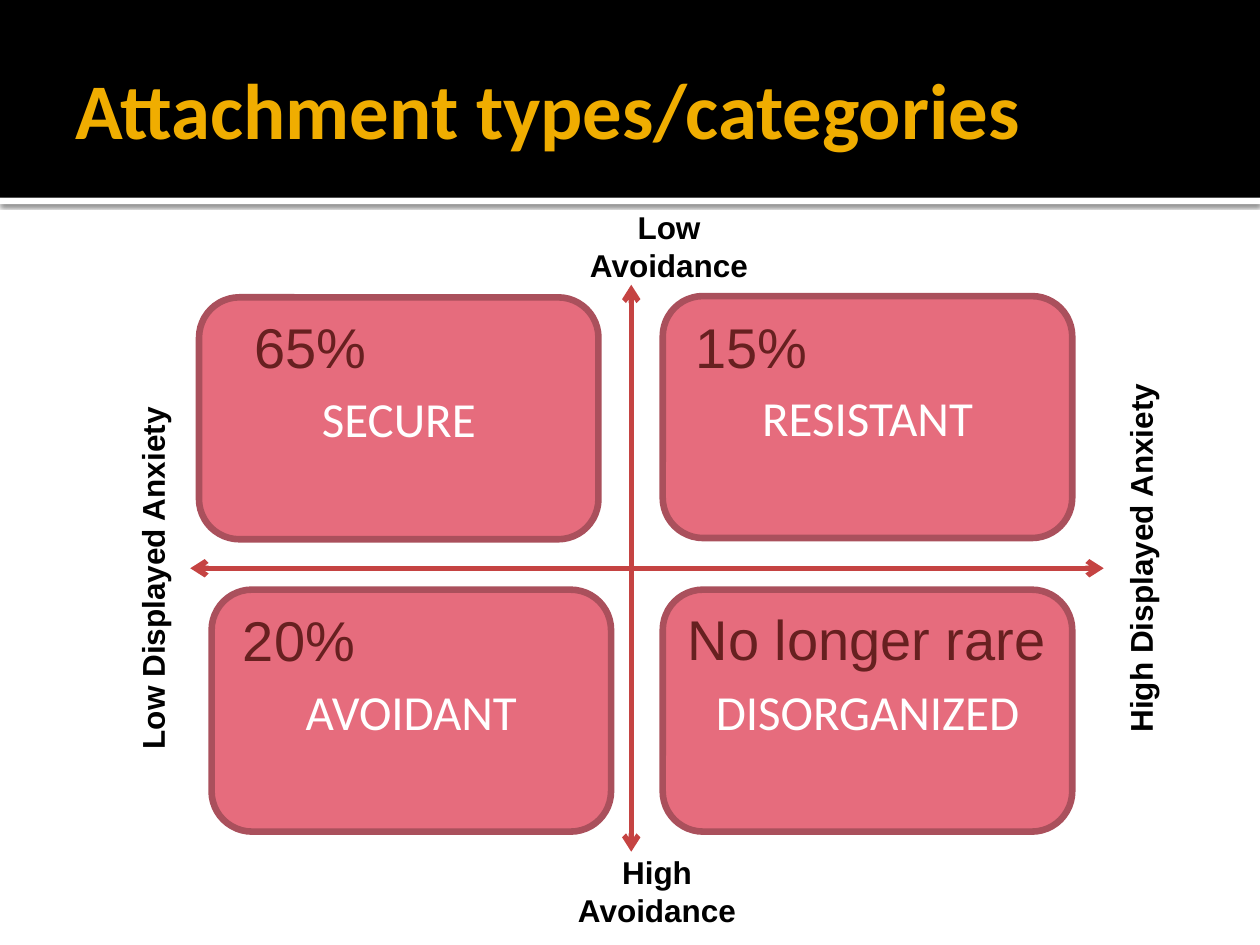
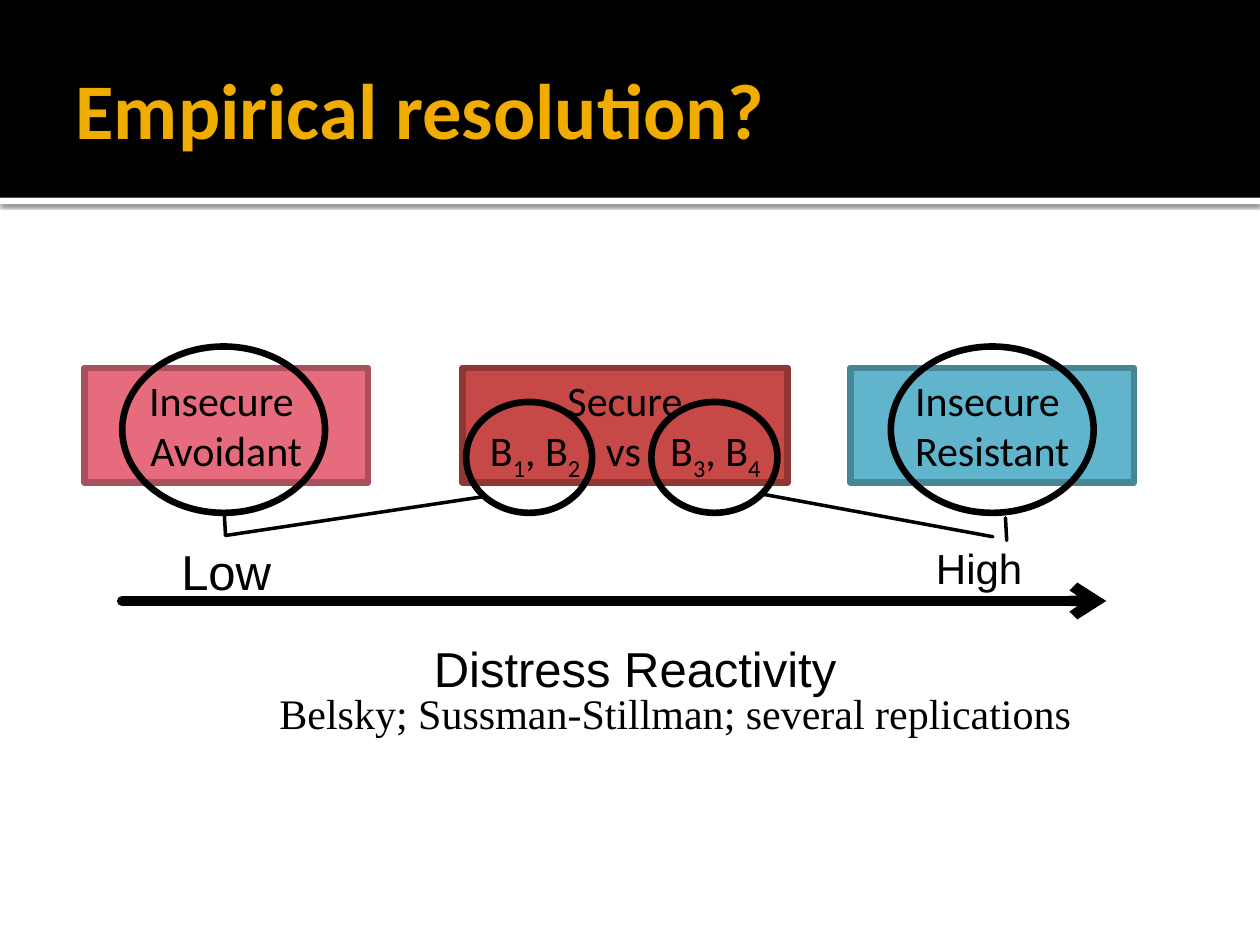
from dataclasses import dataclass

from lxml.etree import SubElement
from pptx import Presentation
from pptx.dml.color import RGBColor
from pptx.enum.shapes import MSO_CONNECTOR as Connector, MSO_SHAPE as Preset
from pptx.enum.text import MSO_ANCHOR as Anchor, PP_ALIGN as Align
from pptx.oxml import parse_xml
from pptx.oxml.ns import nsdecls, qn
from pptx.util import Inches, Pt


@dataclass(frozen=True)
class Theme:
    black: str = "000000"
    white: str = "FFFFFF"
    gold: str = "F0AD00"
    pink: str = "E66C7D"
    pink_edge: str = "AA505C"
    red: str = "C64847"
    red_edge: str = "923535"
    blue: str = "60B5CC"
    blue_edge: str = "478697"
    axis: str = "C54342"
    maroon: str = "672020"
    heading: str = "Calibri"
    label: str = "Arial"
    serif: str = "Times New Roman"
    title_size: int = 45
    percent_size: int = 32
    large: int = 28
    medium: int = 24
    small: int = 18
    edge: float = 3.78


theme = Theme()


def add_box(slide, at, lines=(), preset=None, fill=None, edge=None, font=theme.label,
            size=theme.small, color=theme.black, bold=False, align=Align.CENTER,
            anchor=Anchor.TOP, wrap=True):
    """Add a preset shape, or a text box when no preset is given."""
    place = [Inches(length) for length in at]
    if preset is None:
        shape = slide.shapes.add_textbox(*place)
    else:
        shape = slide.shapes.add_shape(preset, *place)
        shape.shadow.inherit = False
        if fill:
            shape.fill.solid()
            shape.fill.fore_color.rgb = RGBColor.from_string(fill)
        else:
            shape.fill.background()
        if edge:
            shape.line.color.rgb = RGBColor.from_string(edge)
            shape.line.width = Pt(theme.edge)
        else:
            shape.line.fill.background()
    frame = shape.text_frame
    frame.word_wrap = wrap
    frame.vertical_anchor = anchor
    for index, line in enumerate(lines):
        paragraph = frame.paragraphs[0] if index == 0 else frame.add_paragraph()
        paragraph.add_run().text = line
        paragraph.alignment = align
        paragraph.font.name = font
        paragraph.font.size = Pt(size)
        paragraph.font.bold = bold
        paragraph.font.color.rgb = RGBColor.from_string(color)
    return shape


def add_line(slide, start, end, color=theme.black, width=2, arrows=()):
    """Add a straight line; arrows names the ends that carry a head."""
    line = slide.shapes.add_connector(
        Connector.STRAIGHT, *(Inches(length) for length in (*start, *end)))
    line.line.color.rgb = RGBColor.from_string(color)
    line.line.width = Pt(width)
    outline = line.line._get_or_add_ln()
    outline.set("cap", "rnd")
    for arrow in arrows:
        SubElement(outline, qn(f"a:{arrow}"), type="arrow")
    SubElement(line._element.spPr, qn("a:effectLst"))
    return line


presentation = Presentation()
presentation.slide_width, presentation.slide_height = Inches(10), Inches(7.5)
layout = presentation.slide_layouts[5]

# Both slides with their titles
slides = []
for heading in ("Attachment types/categories", "Empirical resolution?"):
    slide = presentation.slides.add_slide(layout)
    title = slide.shapes.title
    title.left, title.top, title.width, title.height = map(Inches, (0.5, 0.17, 9, 1.37))
    frame = title.text_frame
    frame.text = heading
    frame.vertical_anchor = Anchor.MIDDLE
    frame.margin_left = Inches(0.1)
    frame.margin_right = frame.margin_top = frame.margin_bottom = Inches(0.05)
    paragraph = frame.paragraphs[0]
    paragraph.alignment = Align.LEFT
    paragraph.font.name = theme.heading
    paragraph.font.size = Pt(theme.title_size)
    paragraph.font.bold = True
    paragraph.font.color.rgb = RGBColor.from_string(theme.gold)
    slides.append(slide)
types_slide, reactivity_slide = slides

# Shared header band and shadowed strip, moved into the layout
strip = add_box(types_slide, (0, 1.57, 10, 0.05), preset=Preset.RECTANGLE, fill=theme.white)
band = add_box(types_slide, (0, 0, 10, 1.57), preset=Preset.RECTANGLE, fill=theme.black)
strip._element.spPr.find(qn("a:effectLst")).append(parse_xml(
    f'<a:outerShdw {nsdecls("a")} blurRad="{Pt(2.5)}" dist="{Pt(0.8)}" dir="5400000">'
    f'<a:srgbClr val="{theme.black}"><a:alpha val="60000"/></a:srgbClr></a:outerShdw>'))
for position, shape in enumerate((strip, band), start=2):
    layout.shapes._spTree.insert(position, shape._element)

# Slide 1: four attachment types
for name, at in (
    ("SECURE", (1.58, 2.36, 3.17, 1.92)),
    ("RESISTANT", (5.26, 2.35, 3.25, 1.92)),
    ("AVOIDANT", (1.68, 4.68, 3.17, 1.92)),
    ("DISORGANIZED", (5.26, 4.68, 3.25, 1.92)),
):
    add_box(types_slide, at, [name], Preset.ROUNDED_RECTANGLE, theme.pink, theme.pink_edge,
            theme.heading, theme.large, theme.white, anchor=Anchor.MIDDLE)

# Axes and their labels
for start, end in (((1.51, 4.51), (8.76, 4.51)), ((5.01, 2.26), (5.01, 6.76))):
    add_line(types_slide, start, end, theme.axis, 3, ("headEnd", "tailEnd"))
for label, at, rotation in (
    ("Low Avoidance", (4.44, 1.6, 1.74, 0.71), 0),
    ("High Avoidance", (4.33, 6.72, 1.77, 0.71), 0),
    ("High Displayed Anxiety", (7.55, 4.23, 3, 0.4), 270),
    ("Low Displayed Anxiety", (-0.26, 4.39, 2.94, 0.4), 270),
):
    box = add_box(types_slide, at, [label], bold=True, wrap=rotation == 0)
    box.rotation = rotation

# Share of each type
for share, at in (
    ("65%", (1.92, 2.43, 1.33, 0.64)),
    ("15%", (5.42, 2.43, 1.5, 0.64)),
    ("20%", (1.83, 4.76, 1.67, 0.64)),
    ("No longer rare", (5.36, 4.75, 3.08, 0.64)),
):
    add_box(types_slide, at, [share], size=theme.percent_size, color=theme.maroon,
            align=Align.LEFT)

# Slide 2: the three groups
group_boxes = [
    add_box(reactivity_slide, (left, 2.92, width, 0.91), lines, Preset.RECTANGLE, fill, edge,
            theme.heading, theme.medium)
    for left, width, lines, fill, edge in (
        (0.67, 2.25, ["Insecure ", "Avoidant"], theme.pink, theme.pink_edge),
        (6.75, 2.25, ["Insecure ", "Resistant"], theme.blue, theme.blue_edge),
        (3.67, 2.58, ["Secure"], theme.red, theme.red_edge),
    )
]

# Secure subgroups, set on tab stops with lowered digits
subgroups = group_boxes[-1].text_frame.add_paragraph()
subgroups.alignment = Align.LEFT
tab_list = SubElement(subgroups._p.get_or_add_pPr(), qn("a:tabLst"))
for stop in (0.12, 1.04, 1.55):
    SubElement(tab_list, qn("a:tab"), pos=str(Inches(stop)), algn="l")
subgroups.font.name = theme.heading
subgroups.font.size = Pt(theme.medium)
subgroups.font.color.rgb = RGBColor.from_string(theme.black)
for text, digit in (("\tB", "1"), (", B", "2"), ("\tvs\tB", "3"), (", B", "4")):
    subgroups.add_run().text = text
    subscript = subgroups.add_run()
    subscript.text = digit
    subscript.font._element.set("baseline", "-25000")

# Reactivity arrow and its labels
add_line(reactivity_slide, (0.97, 4.77), (8.78, 4.77), width=6, arrows=["tailEnd"])
for label, at, size, align in (
    ("Distress Reactivity", (2.58, 5.02, 4.92, 0.57), theme.large, Align.CENTER),
    ("Low", (0.63, 4.25, 2.33, 0.57), theme.large, Align.CENTER),
    ("High", (7.33, 4.26, 1.08, 0.5), theme.medium, Align.LEFT),
):
    add_box(reactivity_slide, at, [label], size=size, align=align)

# Rings around the groups that belong together
for at in (
    (0.97, 2.75, 1.61, 1.32),
    (5.17, 3.19, 1, 0.88),
    (7.07, 2.75, 1.61, 1.32),
    (3.7, 3.19, 1, 0.88),
):
    add_box(reactivity_slide, at, preset=Preset.OVAL, edge=theme.black)

# Lines from the rings to the low and high ends
for start, end in (
    ((1.78, 4.07), (1.79, 4.25)),
    ((3.85, 3.94), (1.79, 4.25)),
    ((7.88, 4.26), (6.04, 3.92)),
    ((7.98, 4.11), (7.99, 4.29)),
):
    add_line(reactivity_slide, start, end)

# Sources
add_box(reactivity_slide, (2.12, 5.41, 6.54, 0.51),
        ["Belsky; Sussman-Stillman; several replications"],
        font=theme.serif, size=theme.medium, align=Align.LEFT, wrap=False)

presentation.save("out.pptx")
